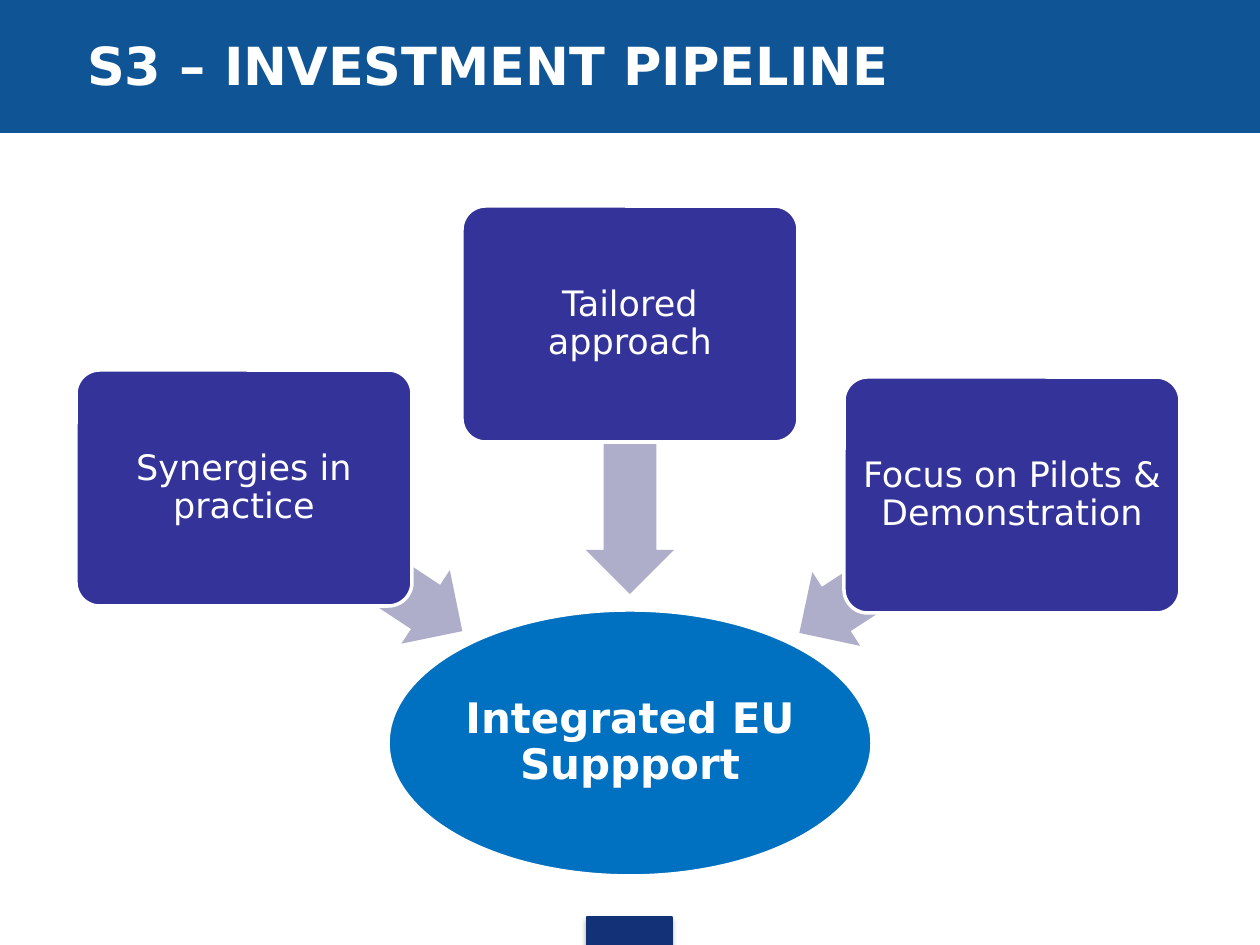
from dataclasses import dataclass
from lxml import etree
from pptx import Presentation
from pptx.dml.color import RGBColor
from pptx.enum.shapes import MSO_SHAPE
from pptx.enum.text import MSO_ANCHOR, PP_ALIGN
from pptx.oxml.ns import qn
from pptx.util import Emu, Pt

RECT = MSO_SHAPE.RECTANGLE
ROUND = MSO_SHAPE.ROUNDED_RECTANGLE
OVAL = MSO_SHAPE.OVAL
ARROW = MSO_SHAPE.LEFT_ARROW
MIDDLE = MSO_ANCHOR.MIDDLE
CENTER = PP_ALIGN.CENTER
LEFT = PP_ALIGN.LEFT
SCALE = 914400 / 126


def px(n):
    """Turn pixels into EMU."""
    return Emu(round(n * SCALE))


@dataclass(frozen=True)
class Theme:
    """Colours, font and type sizes."""
    font: str = "DejaVu Sans"
    white: str = "FFFFFF"
    band: str = "0F5494"
    tab: str = "133176"
    box: str = "333399"
    arrow: str = "AEAECA"
    goal: str = "0070C0"
    shade: str = "000000"
    title: int = 30
    large: int = 24
    body: int = 20


class Deck:
    """Draw styled elements on one slide."""

    def __init__(self, theme, slide):
        self.theme = theme
        self.slide = slide

    def shape(self, kind, area, fill, line=None, width=0.75):
        """Add a preset shape."""
        item = self.slide.shapes.add_shape(kind, *map(px, area))
        item.shadow.inherit = False
        item.fill.solid()
        item.fill.fore_color.rgb = RGBColor.from_string(fill)
        if line:
            item.line.color.rgb = RGBColor.from_string(line)
            item.line.width = Pt(width)
        else:
            item.line.fill.background()
        return item

    def label(self, item, text, size, bold=False, align=CENTER, inset=5):
        """Set the text of a shape or text box."""
        frame = item.text_frame
        frame.word_wrap = True
        frame.vertical_anchor = MIDDLE
        frame.margin_left = frame.margin_right = px(inset)
        frame.margin_top = frame.margin_bottom = px(5)
        par = frame.paragraphs[0]
        par.text = text
        par.alignment = align
        par.line_spacing = 0.9
        par.font.name = self.theme.font
        par.font.size = Pt(size)
        par.font.bold = bold
        par.font.color.rgb = RGBColor.from_string(self.theme.white)

    def title(self, text, area, inset):
        """Add the slide title."""
        item = self.slide.shapes.add_textbox(*map(px, area))
        self.label(item, text, self.theme.title, True, LEFT, inset)
        item.text_frame.paragraphs[0].line_spacing = 1.0

    def box(self, text, left, top):
        """Add a rounded box with a label."""
        look = self.theme
        item = self.shape(ROUND, (left, top, 336, 236), look.box, look.white, 2)
        item.adjustments[0] = 0.1
        self.label(item, text, look.body)

    def arrow(self, area, turn):
        """Add a turned block arrow."""
        item = self.shape(ARROW, area, self.theme.arrow)
        item.adjustments[0] = 0.6
        item.adjustments[1] = 0.5
        item.rotation = turn

    def goal(self, text, area):
        """Add the ellipse that the arrows lead to."""
        look = self.theme
        item = self.shape(OVAL, area, look.goal, look.white, 2)
        self.label(item, text, look.large, True, inset=3)

    def tab(self, area):
        """Add the footer tab with a soft shadow."""
        look = self.theme
        item = self.shape(RECT, area, look.tab, look.tab)
        effects = item.element.spPr.find(qn("a:effectLst"))
        shade = etree.SubElement(effects, qn("a:outerShdw"), blurRad=str(Pt(3.1)),
                                 dist=str(Pt(1.8)), dir="5400000", rotWithShape="0")
        color = etree.SubElement(shade, qn("a:srgbClr"), val=look.shade)
        etree.SubElement(color, qn("a:alpha"), val="35000")


def main():
    """Build and save the slide."""
    show = Presentation()
    show.slide_width, show.slide_height = px(1260), px(945)
    theme = Theme()
    deck = Deck(theme, show.slides.add_slide(show.slide_layouts[6]))
    deck.shape(RECT, (0, 0, 1260, 132), theme.band, theme.band)
    deck.tab((587, 917, 85, 28))
    deck.title("S3 – INVESTMENT PIPELINE", (25, 0, 1191, 129), 62)
    deck.goal("Integrated EU Suppport", (388, 610, 484, 266))
    parts = [
        ("Synergies in practice", 76, 370, (222, 515, 262, 88), 213.4),
        ("Tailored\vapproach", 462, 206, (495, 415, 270, 88), 270),
        ("Focus on Pilots & Demonstration", 844, 377, (779, 520, 253, 88), 327),
    ]
    for text, left, top, area, turn in parts:
        deck.arrow(area, turn)
        deck.box(text, left, top)
    show.save("out.pptx")


if __name__ == "__main__":
    main()
